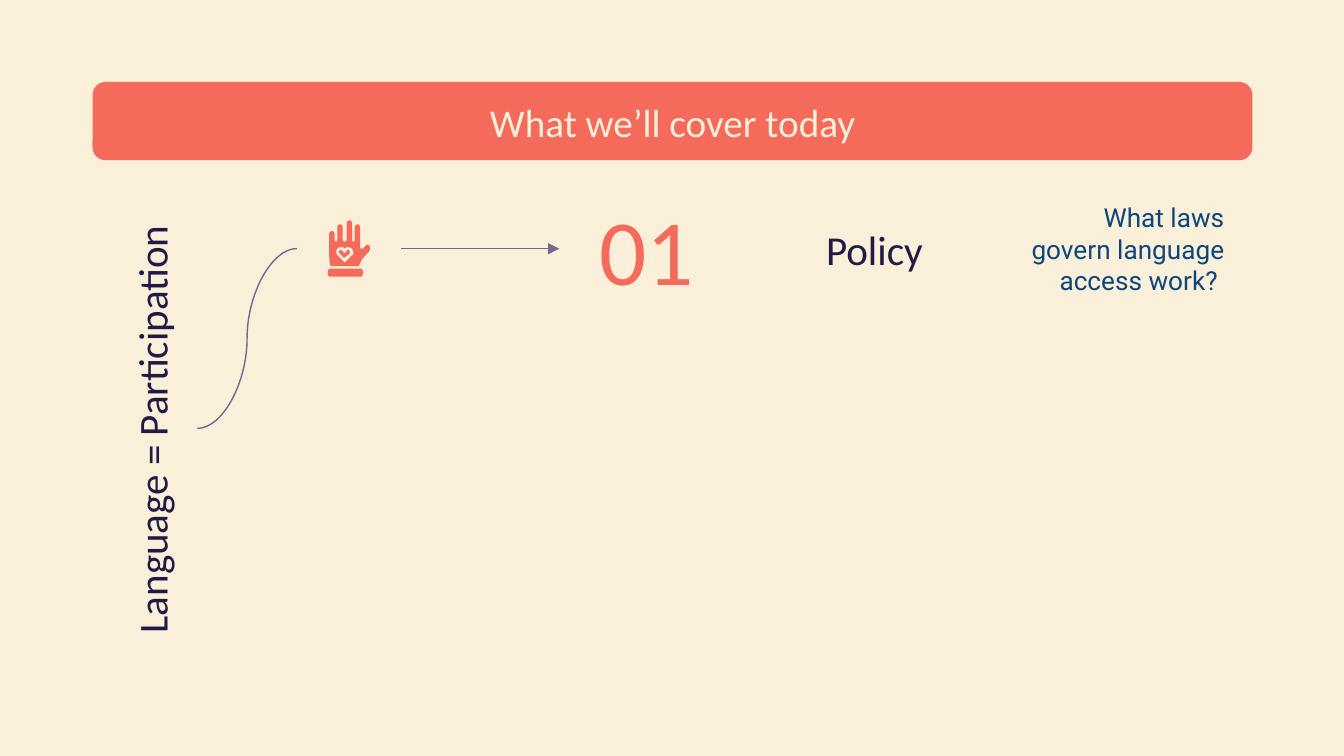
from dataclasses import dataclass

from lxml import etree
from pptx import Presentation
from pptx import util as u
from pptx.dml.color import RGBColor
from pptx.enum import shapes, text
from pptx.oxml import ns

CREAM = RGBColor(0xFA, 0xEF, 0xD9)
CORAL = RGBColor(0xF4, 0x6B, 0x5C)
NAVY = RGBColor(0x21, 0x1A, 0x46)
BLUE = RGBColor(0x0C, 0x46, 0x7C)
PURPLE = RGBColor(0x75, 0x65, 0x91)

ROW_TOP, ROW_HEIGHT = 3.94, 1.52
ROW_MIDDLE = 4.7
ICON_UNIT = u.Cm(0.0254)


@dataclass
class Label:
    wording: str
    left: float
    top: float
    width: float
    height: float
    size: int
    color: RGBColor
    font: str = "Calibri"
    align: text.PP_ALIGN = text.PP_ALIGN.CENTER
    rotation: int = 0


@dataclass
class Link:
    kind: shapes.MSO_CONNECTOR
    start: tuple[float, float]
    end: tuple[float, float]
    arrow: bool = False


LABELS = [
    Label("What we’ll cover today", 2.01, 1.5, 21.41, 1.6, 21, CREAM),
    Label("What laws govern language access work? ", 19.15, ROW_TOP, 4.24, ROW_HEIGHT,
          14, BLUE, "Roboto", text.PP_ALIGN.RIGHT),
    Label("Policy", 13.87, ROW_TOP, 5.31, ROW_HEIGHT, 22, NAVY),
    Label("01", 10.57, ROW_TOP, 3.3, ROW_HEIGHT, 50, CORAL),
    Label("Language = Participation", -1.52, 7.24, 8.76, 1.75, 22, NAVY, rotation=270),
]

LINKS = [
    Link(shapes.MSO_CONNECTOR.STRAIGHT, (7.57, ROW_MIDDLE), (10.57, ROW_MIDDLE), arrow=True),
    Link(shapes.MSO_CONNECTOR.CURVE, (3.73, 8.1), (5.61, ROW_MIDDLE)),
]

# Icon outlines in icon units: two numbers are a line end, six are a Bézier curve
Outline = list[tuple[float, ...]]
HEART: Outline = [
    (259, 186), (259, 186, 258, 186, 258, 187), (257, 188),
    (256.6, 188.4, 255.6, 188.4, 255, 187), (254, 186, 254, 186, 254, 186),
    (253, 186, 252, 187, 252, 188), (252, 188, 253, 188, 253, 189),
    (256, 192), (260, 189), (261, 188, 260, 186, 259, 186),
]
HEART_HOLE: Outline = [
    (259, 184), (261, 184, 263, 185, 263, 188), (263, 189, 263, 190, 262, 190),
    (257, 195), (256.6, 195.3, 256.4, 195.3, 256, 195), (251, 190),
    (250, 189, 250, 186, 251, 185), (252, 184, 253, 184, 254, 184),
    (255, 184, 256, 184, 256.5, 185), (257, 184, 258, 184, 259, 184),
]
HAND: Outline = [
    (260, 164), (259, 164, 258, 165, 258, 166), (258, 178),
    (258, 180.6, 255, 180.6, 255, 178), (255, 169),
    (255, 168, 254, 167, 253, 167), (252, 167, 251, 168, 251, 169), (251, 178),
    (251, 180.6, 249, 180.6, 249, 178), (249, 174),
    (249, 173, 248, 172, 247, 172), (246, 172, 245, 173, 245, 174), (245, 187),
    (245, 191, 245, 195, 246, 198), (267, 198), (268, 195, 270, 192, 272, 190),
    (274, 188), (275, 187, 276, 185, 275, 183), (275, 183, 274, 182, 273, 182),
    (273, 182, 272, 183, 272, 183), (271, 184, 271, 184, 270, 185),
    (269, 185.4, 268, 185, 268, 184), (268, 169),
    (268, 168, 267, 167, 266, 167), (265, 167, 264, 168, 264, 169), (264, 178),
    (264, 180.6, 262, 180.6, 262, 178), (262, 166),
    (262, 165, 261, 164, 260, 164),
]
CUFF: Outline = [
    (245, 200), (245, 200, 244, 201, 244, 202), (244, 204),
    (244, 205, 245, 206, 245, 206), (269, 206), (269, 206, 270, 205, 270, 204),
    (270, 202), (270, 201, 269, 200, 269, 200),
]
ICON_PARTS = [[HEART], [HAND, HEART_HOLE], [CUFF]]


def flatten(outline: Outline, steps: int = 6) -> list[tuple[float, float]]:
    """Turn lines and curves into points on the slide."""
    points = [outline[0]]
    for segment in outline[1:]:
        if len(segment) == 2:
            points.append(segment)
            continue
        start = points[-1]
        for step in range(1, steps + 1):
            t = step / steps
            weights = ((1 - t) ** 3, 3 * t * (1 - t) ** 2, 3 * t * t * (1 - t), t ** 3)
            controls = (start, segment[0:2], segment[2:4], segment[4:6])
            points.append(tuple(sum(w * c[axis] for w, c in zip(weights, controls))
                                for axis in (0, 1)))
    return [(x * ICON_UNIT, y * ICON_UNIT) for x, y in points]


def paint(shape, color: RGBColor) -> None:
    shape.shadow.inherit = False
    shape.fill.solid()
    shape.fill.fore_color.rgb = color
    shape.line.fill.background()


def draw_icon_part(slide, outlines: list[Outline]) -> None:
    first, *others = [flatten(outline) for outline in outlines]
    builder = slide.shapes.build_freeform(*first[0])
    builder.add_line_segments(first[1:], close=True)
    for points in others:
        builder.move_to(*points[0])
        builder.add_line_segments(points[1:], close=True)
    paint(builder.convert_to_shape(), CORAL)


def draw_label(slide, label: Label) -> None:
    shape = slide.shapes.add_textbox(u.Cm(label.left), u.Cm(label.top),
                                     u.Cm(label.width), u.Cm(label.height))
    shape.rotation = label.rotation
    frame = shape.text_frame
    frame.word_wrap = True
    frame.vertical_anchor = text.MSO_ANCHOR.MIDDLE
    frame.margin_left = frame.margin_right = u.Cm(0.25)
    frame.margin_top = frame.margin_bottom = u.Cm(0.25)
    frame.text = label.wording
    paragraph = frame.paragraphs[0]
    paragraph.alignment = label.align
    font = paragraph.runs[0].font
    font.name, font.size = label.font, u.Pt(label.size)
    font.color.rgb = label.color


def draw_link(slide, link: Link) -> None:
    connector = slide.shapes.add_connector(
        link.kind, *(u.Cm(value) for value in link.start + link.end))
    connector.line.color.rgb = PURPLE
    connector.line.width = u.Pt(0.75)
    if link.arrow:
        etree.SubElement(connector.line._get_or_add_ln(), ns.qn("a:tailEnd"), type="triangle")
    etree.SubElement(connector._element.spPr, ns.qn("a:effectLst"))


def main() -> None:
    presentation = Presentation()
    presentation.slide_width = u.Cm(25.4)
    presentation.slide_height = u.Cm(14.29)
    slide = presentation.slides.add_slide(presentation.slide_layouts[6])
    slide.background.fill.solid()
    slide.background.fill.fore_color.rgb = CREAM

    # Title banner
    banner = slide.shapes.add_shape(shapes.MSO_SHAPE.ROUNDED_RECTANGLE,
                                    u.Cm(1.75), u.Cm(1.55), u.Cm(21.92), u.Cm(1.48))
    paint(banner, CORAL)

    # Wording, links and hand icon
    for label in LABELS:
        draw_label(slide, label)
    for link in LINKS:
        draw_link(slide, link)
    for outlines in ICON_PARTS:
        draw_icon_part(slide, outlines)

    presentation.save("out.pptx")


if __name__ == "__main__":
    main()
